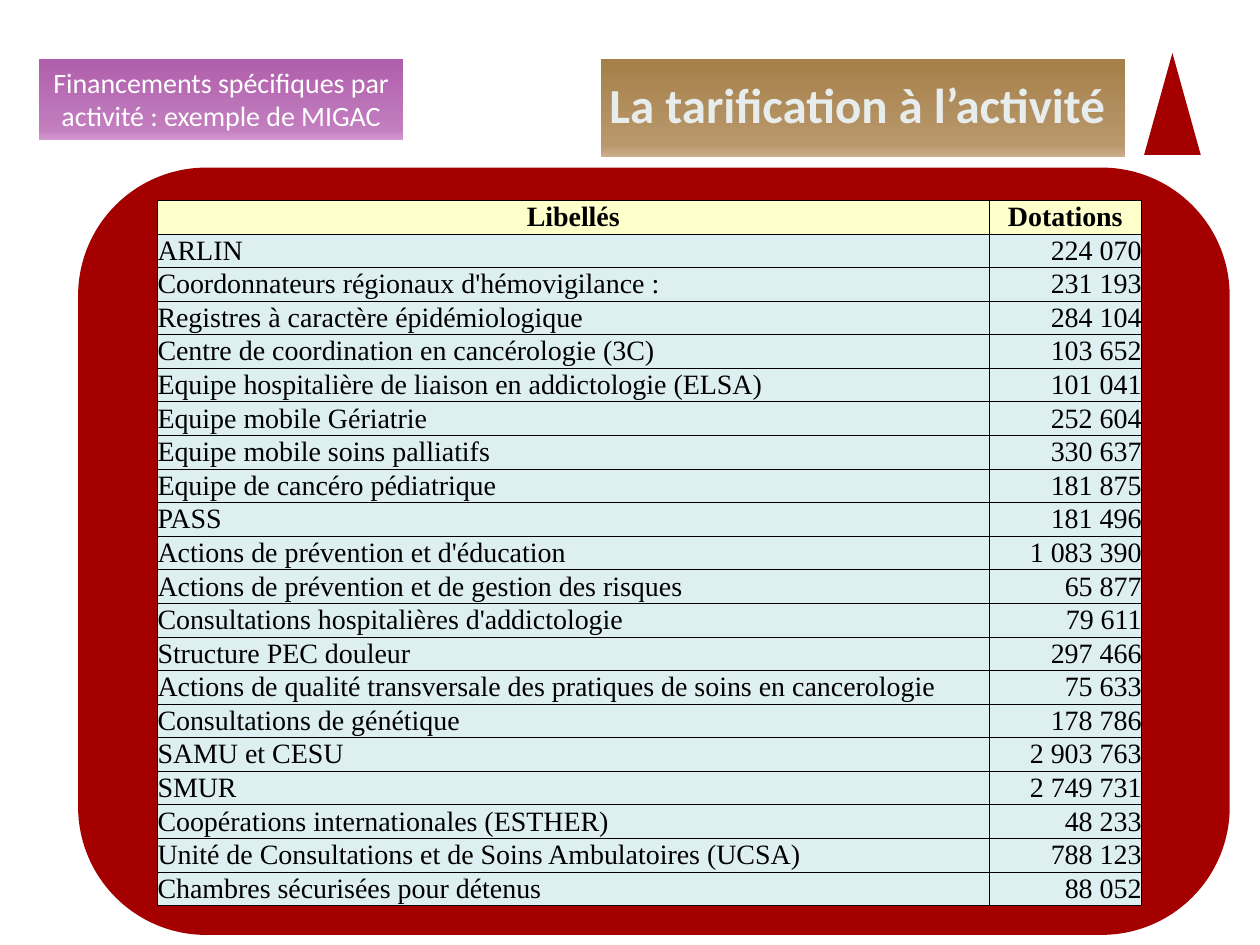
import copy
import dataclasses

import pptx
import pptx.dml.color
import pptx.enum.shapes
import pptx.enum.text
import pptx.oxml
import pptx.oxml.ns
import pptx.util

Inches = pptx.util.Inches
Pt = pptx.util.Pt
SHAPE = pptx.enum.shapes.MSO_SHAPE
ALIGN = pptx.enum.text.PP_ALIGN
ANCHOR = pptx.enum.text.MSO_ANCHOR


@dataclasses.dataclass(frozen=True)
class Theme:
    """Colours, fonts and type sizes of the slide."""
    red: str = "A40000"
    gold: tuple = ((0, "CCB08E"), (0.12, "B9986D"), (1, "A58048"))
    purple: tuple = ((0, "D499D1"), (0.12, "C37EBF"), (1, "AF5FAB"))
    title_ink: str = "E7ECED"
    white: str = "FFFFFF"
    black: str = "000000"
    header: str = "FFFFCC"
    body: str = "DEEFF1"
    sans: str = "Calibri"
    serif: str = "Times New Roman"
    title_size: int = 28
    text_size: int = 16
    border: float = 0.5


THEME = Theme()
HEADINGS = ("Libellés", "Dotations")
GRANTS = (
    ("ARLIN", 224070),
    ("Coordonnateurs régionaux d'hémovigilance :", 231193),
    ("Registres à caractère épidémiologique", 284104),
    ("Centre de coordination en cancérologie (3C)", 103652),
    ("Equipe hospitalière de liaison en addictologie (ELSA)", 101041),
    ("Equipe mobile Gériatrie", 252604),
    ("Equipe mobile soins palliatifs", 330637),
    ("Equipe de cancéro pédiatrique", 181875),
    ("PASS", 181496),
    ("Actions de prévention et d'éducation", 1083390),
    ("Actions de prévention et de gestion des risques", 65877),
    ("Consultations hospitalières d'addictologie", 79611),
    ("Structure PEC douleur", 297466),
    ("Actions de qualité transversale des pratiques de soins en cancerologie", 75633),
    ("Consultations de génétique", 178786),
    ("SAMU et CESU", 2903763),
    ("SMUR", 2749731),
    ("Coopérations internationales (ESTHER)", 48233),
    ("Unité de Consultations et de Soins Ambulatoires (UCSA)", 788123),
    ("Chambres sécurisées pour détenus", 88052),
)


def rgb(value):
    """Turn a hex string into a colour."""
    return pptx.dml.color.RGBColor.from_string(value)


def set_all(obj, values):
    """Set attributes from a dict of format values."""
    for name, value in values.items():
        setattr(obj, name, value)


def set_margins(obj, left, top, right, bottom):
    """Set the four inner margins, in inches."""
    set_all(obj, {"margin_left": Inches(left), "margin_top": Inches(top),
                  "margin_right": Inches(right), "margin_bottom": Inches(bottom)})


def fill_solid(fill, color):
    """Give a fill one plain colour."""
    fill.solid()
    fill.fore_color.rgb = rgb(color)


def fill_gradient(fill, stops):
    """Give a fill a gradient that runs from bottom to top."""
    fill.gradient()
    fill.gradient_angle = 90
    last = fill._fill._gradFill.gsLst[-1]
    for _ in range(len(stops) - len(fill.gradient_stops)):
        last.addnext(copy.deepcopy(last))
    for stop, (position, color) in zip(fill.gradient_stops, stops):
        stop.color.rgb = rgb(color)
        stop.position = position


def write(tf, text, align, font, size, color, bold=False):
    """Write one formatted paragraph into a text frame."""
    p = tf.paragraphs[0]
    p.alignment = align
    r = p.add_run()
    r.text = text
    set_all(r.font, {"name": font, "size": Pt(size), "bold": bold})
    r.font.color.rgb = rgb(color)
    return p


def add_shape(s, kind, box, fill):
    """Add a borderless preset shape with a plain or gradient fill."""
    sp = s.shapes.add_shape(kind, *map(Inches, box))
    sp.shadow.inherit = False
    sp.line.fill.background()
    (fill_solid if isinstance(fill, str) else fill_gradient)(sp.fill, fill)
    return sp


def add_banner(s, box, fill, margins, anchor, text, **style):
    """Add a gradient rectangle with text."""
    sp = add_shape(s, SHAPE.RECTANGLE, box, fill)
    tf = sp.text_frame
    set_all(tf, {"word_wrap": True, "vertical_anchor": anchor})
    set_margins(tf, *margins)
    return write(tf, text, font=THEME.sans, **style)


def add_borders(cell):
    """Draw a thin line on each side of a cell."""
    tc_pr = cell._tc.get_or_add_tcPr()
    for side in "LRTB":
        tc_pr.append(pptx.oxml.parse_xml(
            f'<a:ln{side} {pptx.oxml.ns.nsdecls("a")} w="{Pt(THEME.border)}">'
            f'<a:solidFill><a:srgbClr val="{THEME.black}"/></a:solidFill></a:ln{side}>'))


def add_cell(cell, text, align, fill, bold):
    """Format and fill one table cell."""
    set_margins(cell, 0, 0, 0, 0)
    cell.vertical_anchor = ANCHOR.MIDDLE
    add_borders(cell)
    fill_solid(cell.fill, fill)
    write(cell.text_frame, text, align, THEME.serif, THEME.text_size, THEME.black, bold)


def add_grants_table(s, box, widths):
    """Add the table of grants with equal row heights."""
    rows = [HEADINGS] + [(name, f"{amount:,}".replace(",", " ")) for name, amount in GRANTS]
    table = s.shapes.add_table(len(rows), len(widths), *map(Inches, box)).table
    set_all(table, {"first_row": False, "horz_banding": False})
    for column, width in zip(table.columns, widths):
        column.width = Inches(width)
    for i, row in enumerate(rows):
        head = i == 0
        aligns = (ALIGN.CENTER, ALIGN.CENTER) if head else (ALIGN.LEFT, ALIGN.RIGHT)
        for j, (text, align) in enumerate(zip(row, aligns)):
            add_cell(table.cell(i, j), text, align, THEME.header if head else THEME.body, head)


def main():
    """Build the slide and save it."""
    prs = pptx.Presentation()
    set_all(prs, {"slide_width": Inches(10), "slide_height": Inches(7.5)})
    s = prs.slides.add_slide(prs.slide_layouts[6])
    panel = add_shape(s, SHAPE.ROUNDED_RECTANGLE, (0.62, 1.33, 9.14, 6.09), THEME.red)
    panel.adjustments[0] = 0.167
    add_shape(s, SHAPE.ISOSCELES_TRIANGLE, (9.08, 0.42, 0.45, 0.81), THEME.red)
    title = add_banner(s, (4.77, 0.47, 4.16, 0.78), THEME.gold, (0.06, 0.11, 0.16, 0.03),
                       ANCHOR.MIDDLE, "La tarification à l’activité", align=ALIGN.RIGHT,
                       size=THEME.title_size, color=THEME.title_ink, bold=True)
    title.line_spacing = 0.6
    add_banner(s, (0.31, 0.47, 2.89, 0.64), THEME.purple, (0.1, 0.05, 0.1, 0.05),
               ANCHOR.TOP, "Financements spécifiques par activité : exemple de MIGAC",
               align=ALIGN.CENTER, size=THEME.text_size, color=THEME.white)
    add_grants_table(s, (1.25, 1.59, 7.81, 5.6), (6.6, 1.21))
    prs.save("out.pptx")


if __name__ == "__main__":
    main()
